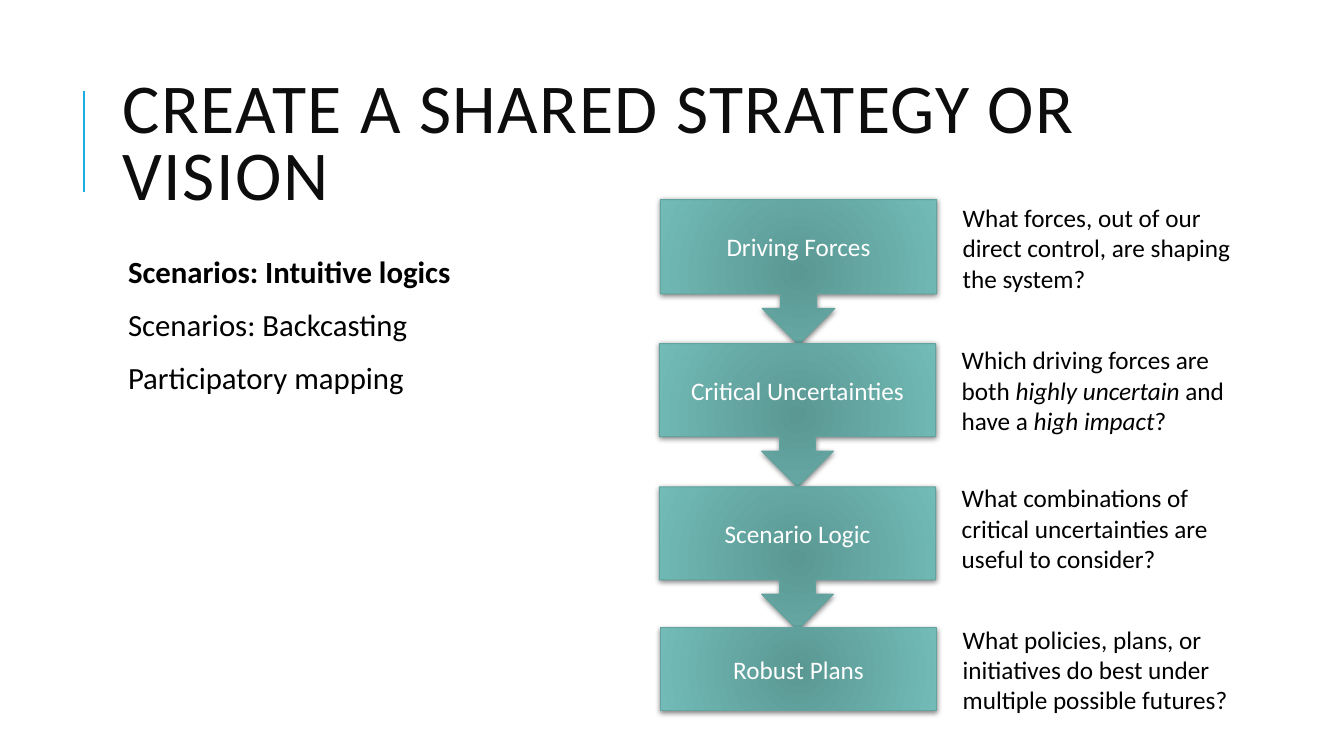
import pptx
import pptx.util
import pptx.dml.color
import pptx.enum.shapes
import pptx.enum.text
import pptx.oxml
import pptx.oxml.ns
from pptx.util import Inches

COLOURS = {
    "accent": "1CADE4",
    "title": "0D0D0D",
    "text": "000000",
    "step_text": "FFFFFF",
    "step_centre": "5B9894",
    "step_edge": "72BBB6",
    "step_line": "62A39F",
    "shadow": "000000",
}
FONT = "Calibri"

METHODS = [
    ("Scenarios: Intuitive logics", True),
    ("Scenarios: Backcasting", False),
    ("Participatory mapping", False),
]

# Step: name, (left, top, height); question: (left, top), runs as (text, italic)
STEPS = [
    ("Driving Forces", (6.55, 1.98, 1.44), (9.45, 1.96),
     [("What forces, out of our direct control, are shaping the system?", False)]),
    ("Critical Uncertainties", (6.54, 3.41, 1.42), (9.44, 3.37),
     [("Which driving forces are both ", False), ("highly uncertain", True),
      (" and have a ", False), ("high impact", True), ("?", False)]),
    ("Scenario Logic", (6.54, 4.83, 1.42), (9.44, 4.74),
     [("What combinations of critical uncertainties are useful to consider?", False)]),
    ("Robust Plans", (6.55, 6.23, 0.82), (9.45, 6.14),
     [("What policies, plans, or initiatives do best under multiple possible futures?", False)]),
]


def rgb(name):
    return pptx.dml.color.RGBColor.from_string(COLOURS[name])


def drawing_xml(xml):
    head, tail = xml.split(">", 1)
    slash = "/" if head.endswith("/") else ""
    head = head.rstrip("/")
    return pptx.oxml.parse_xml(f"{head} {pptx.oxml.ns.nsdecls('a')}{slash}>{tail}")


def add_run(paragraph, text, size, colour, bold=False, italic=False):
    run = paragraph.add_run()
    run.text = text
    run.font.name = FONT
    run.font.size = pptx.util.Pt(size)
    run.font.bold = bold
    run.font.italic = italic
    run.font.color.rgb = rgb(colour)
    return run


def add_text_frame(slide, left, top, width, height):
    box = slide.shapes.add_textbox(Inches(left), Inches(top), Inches(width), Inches(height))
    box.text_frame.word_wrap = True
    return box.text_frame


def add_title(slide, text):
    frame = add_text_frame(slide, 1.12, 0.64, 10.63, 1.64)
    frame.vertical_anchor = pptx.enum.text.MSO_ANCHOR.MIDDLE
    paragraph = frame.paragraphs[0]
    paragraph.line_spacing = 0.8
    run = add_run(paragraph, text, 50, "title")
    run.font._element.set("spc", "100")


def add_title_rule(slide):
    rule = slide.shapes.add_connector(
        pptx.enum.shapes.MSO_CONNECTOR.STRAIGHT,
        Inches(0.83), Inches(1.9), Inches(0.83), Inches(0.9))
    rule.line.color.rgb = rgb("accent")
    rule.line.width = pptx.util.Pt(1.5)
    rule._element.spPr.append(drawing_xml("<a:effectLst/>"))


def add_methods(slide):
    frame = add_text_frame(slide, 1.12, 2.5, 10.63, 4.4)
    frame.margin_left = Inches(0.15)
    frame.margin_top = frame.margin_right = frame.margin_bottom = Inches(0.05)
    for index, (method, bold) in enumerate(METHODS):
        paragraph = frame.add_paragraph() if index else frame.paragraphs[0]
        paragraph.line_spacing = 0.9
        paragraph.space_before = pptx.util.Pt(12)
        paragraph.space_after = pptx.util.Pt(2)
        add_run(paragraph, method, 22, "text", bold=bold)


def apply_radial_fill(shape):
    shape.fill.gradient()
    for stop, colour in zip(shape.fill.gradient_stops, ("step_centre", "step_edge")):
        stop.color.rgb = rgb(colour)
    linear = shape._element.spPr.find(".//" + pptx.oxml.ns.qn("a:lin"))
    linear.getparent().replace(linear, drawing_xml(
        '<a:path path="circle">'
        '<a:fillToRect l="100000" t="100000" r="100000" b="100000"/></a:path>'))


def apply_soft_shadow(shape):
    shape.shadow.inherit = False
    effects = shape._element.spPr.find(pptx.oxml.ns.qn("a:effectLst"))
    effects.append(drawing_xml(
        f'<a:outerShdw blurRad="{pptx.util.Pt(4)}" dist="{pptx.util.Pt(1)}" '
        'dir="5400000" rotWithShape="0">'
        f'<a:srgbClr val="{COLOURS["shadow"]}"><a:alpha val="50000"/></a:srgbClr>'
        '</a:outerShdw>'))


def add_step(slide, name, left, top, height, preset):
    step = slide.shapes.add_shape(
        preset, Inches(left), Inches(top), Inches(2.74), Inches(height))
    apply_radial_fill(step)
    step.line.color.rgb = rgb("step_line")
    step.line.width = pptx.util.Pt(0.75)
    apply_soft_shadow(step)
    step.text_frame.word_wrap = True
    step.text_frame.vertical_anchor = pptx.enum.text.MSO_ANCHOR.MIDDLE
    paragraph = step.text_frame.paragraphs[0]
    paragraph.alignment = pptx.enum.text.PP_ALIGN.CENTER
    add_run(paragraph, name, 18, "step_text")


def add_question(slide, left, top, runs):
    frame = add_text_frame(slide, left, top, 2.97, 1.01)
    frame.auto_size = pptx.enum.text.MSO_AUTO_SIZE.SHAPE_TO_FIT_TEXT
    for text, italic in runs:
        add_run(frame.paragraphs[0], text, 18, "text", italic=italic)


def main():
    presentation = pptx.Presentation()
    presentation.slide_width = Inches(13.33)
    presentation.slide_height = Inches(7.5)
    slide = presentation.slides.add_slide(presentation.slide_layouts[6])

    add_title_rule(slide)
    add_title(slide, "CREATE A SHARED STRATEGY OR VISION")
    add_methods(slide)

    presets = pptx.enum.shapes.MSO_SHAPE
    last_step = STEPS[-1][0]
    for name, placement, _, _ in STEPS:
        preset = presets.RECTANGLE if name == last_step else presets.DOWN_ARROW_CALLOUT
        add_step(slide, name, *placement, preset)
    for _, _, corner, runs in STEPS:
        add_question(slide, *corner, runs)

    presentation.save("out.pptx")


if __name__ == "__main__":
    main()
